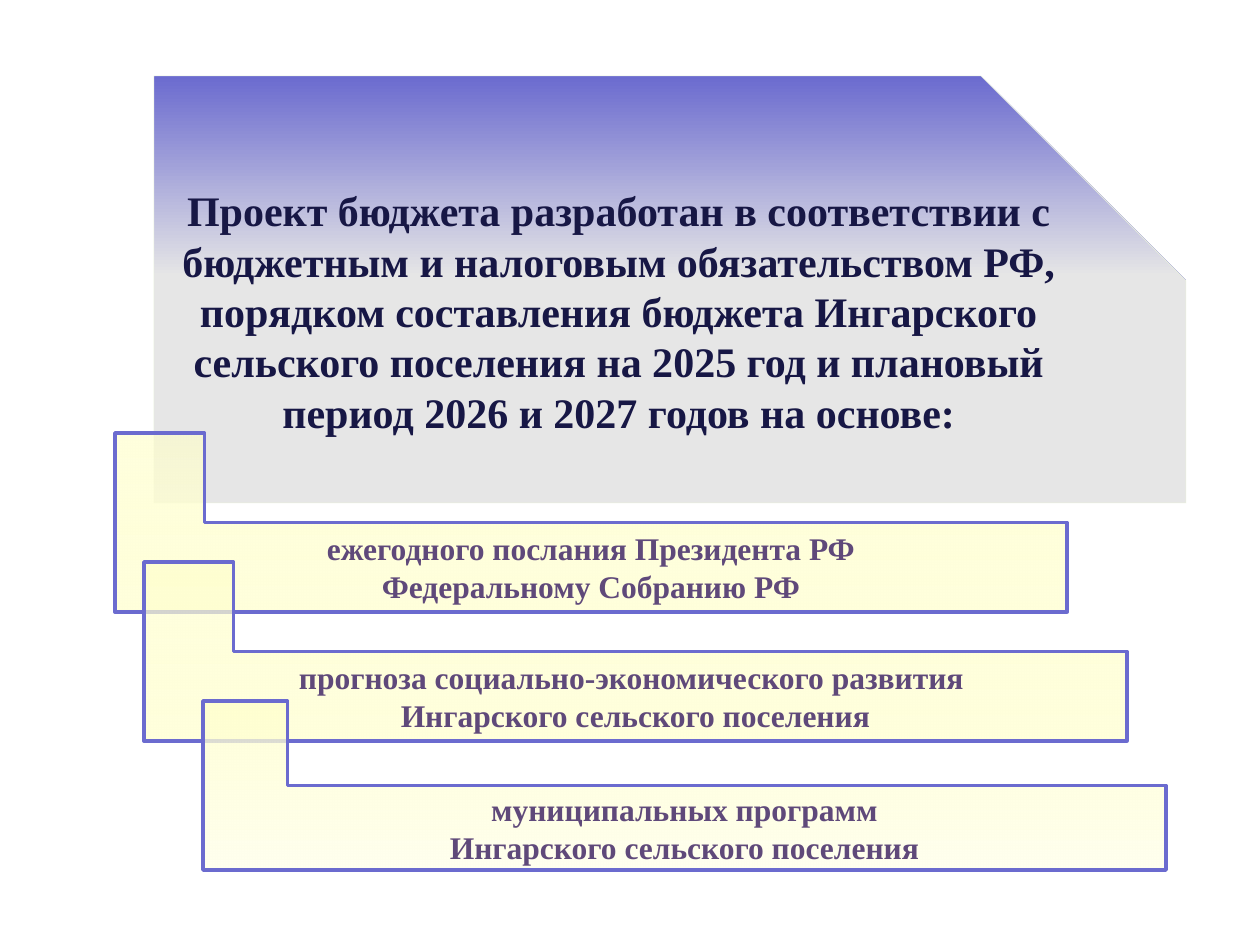
from pptx import Presentation
from pptx.dml.color import RGBColor
from pptx.enum.shapes import MSO_SHAPE
from pptx.enum.text import MSO_ANCHOR, PP_ALIGN
from pptx.oxml.ns import qn
from pptx.util import Pt
from lxml.etree import SubElement

PX = 914400 / 126
FONT = "Times New Roman"
COLORS = {
    "violet": "6B6BCF",
    "gray": "E6E6E6",
    "pale_green": "EAF1DD",
    "navy": "171745",
    "plum": "5F497A",
    "cream": "FFFFCC",
    "light_cream": "FFFFDB",
    "ivory": "FFFFEF",
}
BASES = [
    ((115, 433, 952, 179), 64, "light_cream",
     ["ежегодного послания Президента РФ", "Федеральному Собранию РФ"]),
    ((144, 562, 983, 179), 60, "light_cream",
     ["прогноза социально-экономического развития ", "Ингарского сельского поселения"]),
    ((203, 701, 963, 169), 70, "ivory",
     ["муниципальных программ", "Ингарского сельского поселения"]),
]


def px(length):
    """Turn pixels into EMU."""
    return round(length * PX)


def rgb(name):
    """Look up a named colour."""
    return RGBColor.from_string(COLORS[name])


def add_panel(slide, preset, box, line, width):
    """Add a preset shape with a plain outline and no shadow."""
    panel = slide.shapes.add_shape(preset, *map(px, box))
    panel.shadow.inherit = False
    panel.line.color.rgb = rgb(line)
    panel.line.width = Pt(width)
    return panel


def fill_downward(panel, start, end, end_position=1, start_opacity=100):
    """Fill a shape with a gradient from top to bottom."""
    panel.fill.gradient()
    panel.fill.gradient_angle = 270
    first, last = panel.fill.gradient_stops
    first.position, last.position = 0, end_position
    first.color.rgb, last.color.rgb = rgb(start), rgb(end)
    if start_opacity < 100:
        tint = next(panel._element.spPr.iter(qn("a:srgbClr")))
        SubElement(tint, qn("a:alpha"), val=str(start_opacity * 1000))


def write(panel, lines, size, color, anchor):
    """Write centred bold paragraphs into a shape."""
    frame = panel.text_frame
    frame.word_wrap = True
    frame.vertical_anchor = anchor
    frame.text = "\n".join(lines)
    for paragraph in frame.paragraphs:
        paragraph.alignment = PP_ALIGN.CENTER
        paragraph.font.name = FONT
        paragraph.font.size = Pt(size)
        paragraph.font.bold = True
        paragraph.font.color.rgb = rgb(color)


def add_heading(slide):
    """Add the large panel with the cut corner."""
    heading = add_panel(slide, MSO_SHAPE.SNIP_1_RECTANGLE, (154, 76, 1032, 427),
                        "pale_green", 0.25)
    heading.adjustments[0] = 0.48
    fill_downward(heading, "violet", "gray", end_position=0.47)
    write(heading, [
        "Проект бюджета разработан в соответствии с бюджетным и налоговым "
        "обязательством РФ, порядком составления бюджета Ингарского сельского "
        "поселения на 2025 год и плановый период 2026 и 2027 годов на основе:"
    ], 24, "navy", MSO_ANCHOR.TOP)


def add_basis(slide, box, opacity, end, lines):
    """Add one L-shaped step naming a basis of the budget."""
    basis = add_panel(slide, MSO_SHAPE.CORNER, box, "violet", 2)
    fill_downward(basis, "cream", end, start_opacity=opacity)
    write(basis, lines, 18, "plum", MSO_ANCHOR.MIDDLE)


def main():
    """Build and save the slide."""
    deck = Presentation()
    deck.slide_width, deck.slide_height = px(1260), px(945)
    slide = deck.slides.add_slide(deck.slide_layouts[6])
    add_heading(slide)
    for basis in BASES:
        add_basis(slide, *basis)
    deck.save("out.pptx")


if __name__ == "__main__":
    main()
